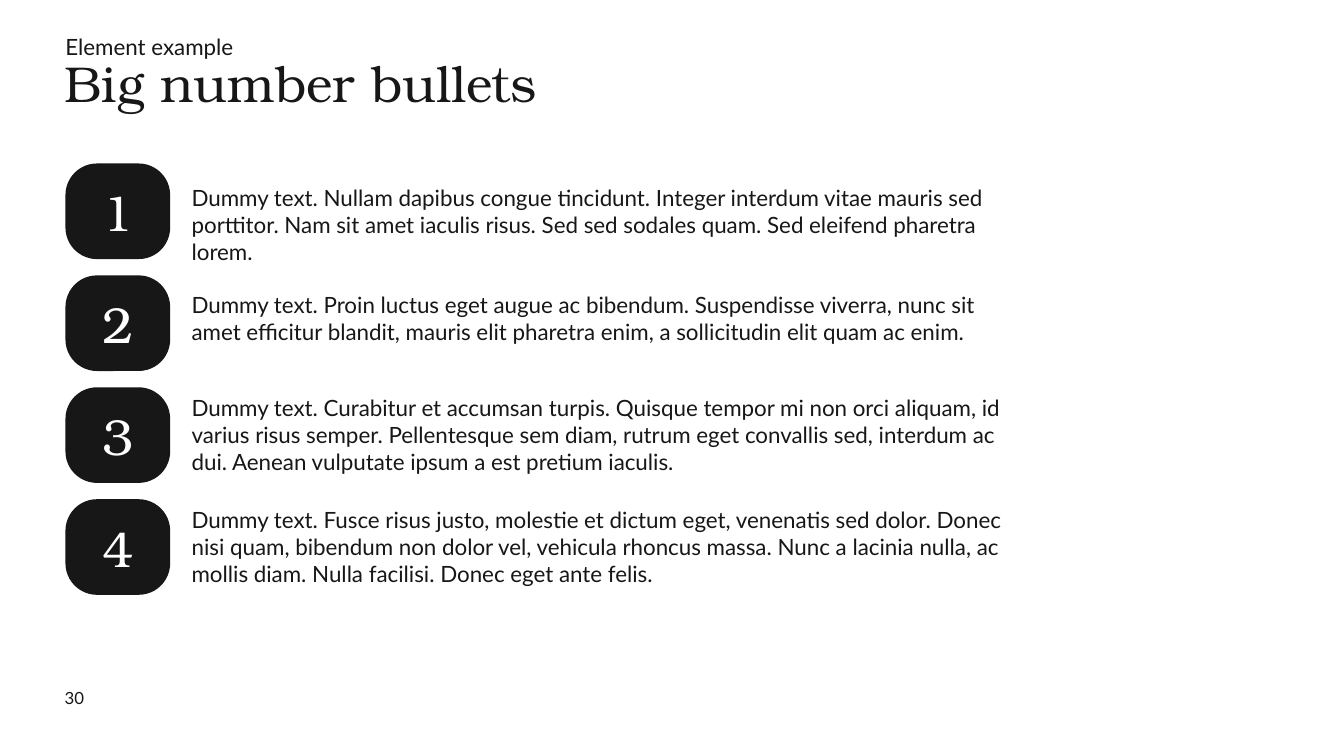
import pptx
import pptx.dml.color
import pptx.enum.shapes
import pptx.enum.text
import pptx.util

Cm = pptx.util.Cm
Pt = pptx.util.Pt
ALIGN = pptx.enum.text.PP_ALIGN
ANCHOR = pptx.enum.text.MSO_ANCHOR

INK = "171717"
WHITE = "FFFFFF"
SANS = "Lato"
SERIF = "TeX Gyre Bonum"

MARGIN = 1.65
FIRST_BADGE_TOP = 4.12
BADGE_STEP = 2.82

# top, width and height of each text in centimetres, then its wording
ITEMS = [
    (4.65, 21.11, 1.37,
     "Dummy text. Nullam dapibus congue tincidunt. Integer interdum vitae mauris sed "
     "porttitor. Nam sit amet iaculis risus. Sed sed sodales quam. Sed eleifend pharetra "
     "lorem."),
    (7.34, 20.29, 1.37,
     "Dummy text. Proin luctus eget augue ac bibendum. Suspendisse viverra, nunc sit "
     "amet efficitur blandit, mauris elit pharetra enim, a sollicitudin elit quam ac enim."),
    (9.93, 21.11, 2.06,
     "Dummy text. Curabitur et accumsan turpis. Quisque tempor mi non orci aliquam, id "
     "varius risus semper. Pellentesque sem diam, rutrum eget convallis sed, interdum ac "
     "dui. Aenean vulputate ipsum a est pretium iaculis."),
    (12.75, 21.11, 2.06,
     "Dummy text. Fusce risus justo, molestie et dictum eget, venenatis sed dolor. Donec "
     "nisi quam, bibendum non dolor vel, vehicula rhoncus massa. Nunc a lacinia nulla, ac "
     "mollis diam. Nulla facilisi. Donec eget ante felis."),
]


def color(value):
    """Return the colour for a hex string."""
    return pptx.dml.color.RGBColor.from_string(value)


def write(shape, text, size=16, font=SANS, ink=INK, align=ALIGN.LEFT,
          anchor=ANCHOR.TOP, spacing=None):
    """Put one formatted paragraph into a shape without margins."""
    frame = shape.text_frame
    frame.word_wrap = True
    frame.auto_size = pptx.enum.text.MSO_AUTO_SIZE.NONE
    frame.vertical_anchor = anchor
    frame.margin_left = frame.margin_right = frame.margin_top = frame.margin_bottom = 0
    para = frame.paragraphs[0]
    para.alignment = align
    para.line_spacing = spacing
    span = para.add_run()
    span.text = text
    span.font.size = Pt(size)
    span.font.name = font
    span.font.color.rgb = color(ink)


def add_text(page, text, left, top, width, height, **style):
    """Add a text box with the given wording."""
    box = page.shapes.add_textbox(Cm(left), Cm(top), Cm(width), Cm(height))
    write(box, text, **style)


def add_title(page, text):
    """Move and fill the title placeholder."""
    title = page.shapes.title
    title.left, title.top, title.width, title.height = Cm(1.63), Cm(1.32), Cm(30.61), Cm(2.41)
    write(title, text, size=36, font=SERIF, spacing=Pt(43.2))


def add_badge(page, number, top):
    """Add a rounded square with a big number."""
    badge = page.shapes.add_shape(
        pptx.enum.shapes.MSO_SHAPE.ROUNDED_RECTANGLE,
        Cm(MARGIN), Cm(top), Cm(2.64), Cm(2.41))
    badge.adjustments[0] = 0.33
    badge.shadow.inherit = False
    badge.fill.solid()
    badge.fill.fore_color.rgb = color(INK)
    badge.line.fill.background()
    write(badge, str(number), size=36, font=SERIF, ink=WHITE,
          align=ALIGN.CENTER, anchor=ANCHOR.MIDDLE)


def main():
    """Build the slide and save the deck."""
    deck = pptx.Presentation()
    deck.slide_width, deck.slide_height = Cm(33.87), Cm(19.05)
    page = deck.slides.add_slide(deck.slide_layouts.get_by_name("Title Only"))
    add_title(page, "Big number bullets")
    add_text(page, "Element example", MARGIN, 0.76, 30.58, 0.56, spacing=1.1)
    for index, (top, width, height, text) in enumerate(ITEMS):
        add_badge(page, index + 1, FIRST_BADGE_TOP + index * BADGE_STEP)
        add_text(page, text, 4.83, top, width, height)
    add_text(page, "30", 1.63, 17.32, 2.59, 0.51, size=12)
    deck.save("out.pptx")


if __name__ == "__main__":
    main()
